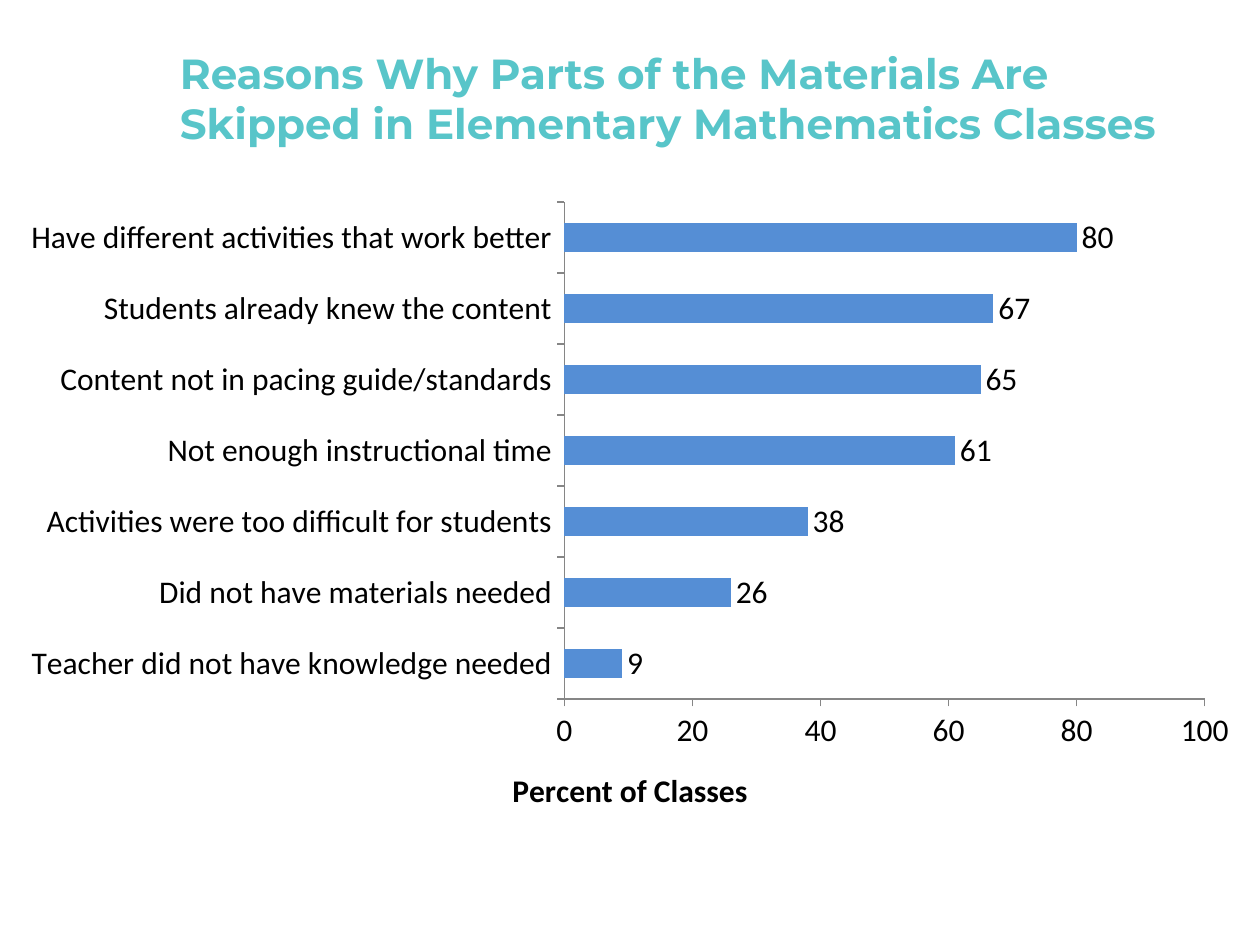
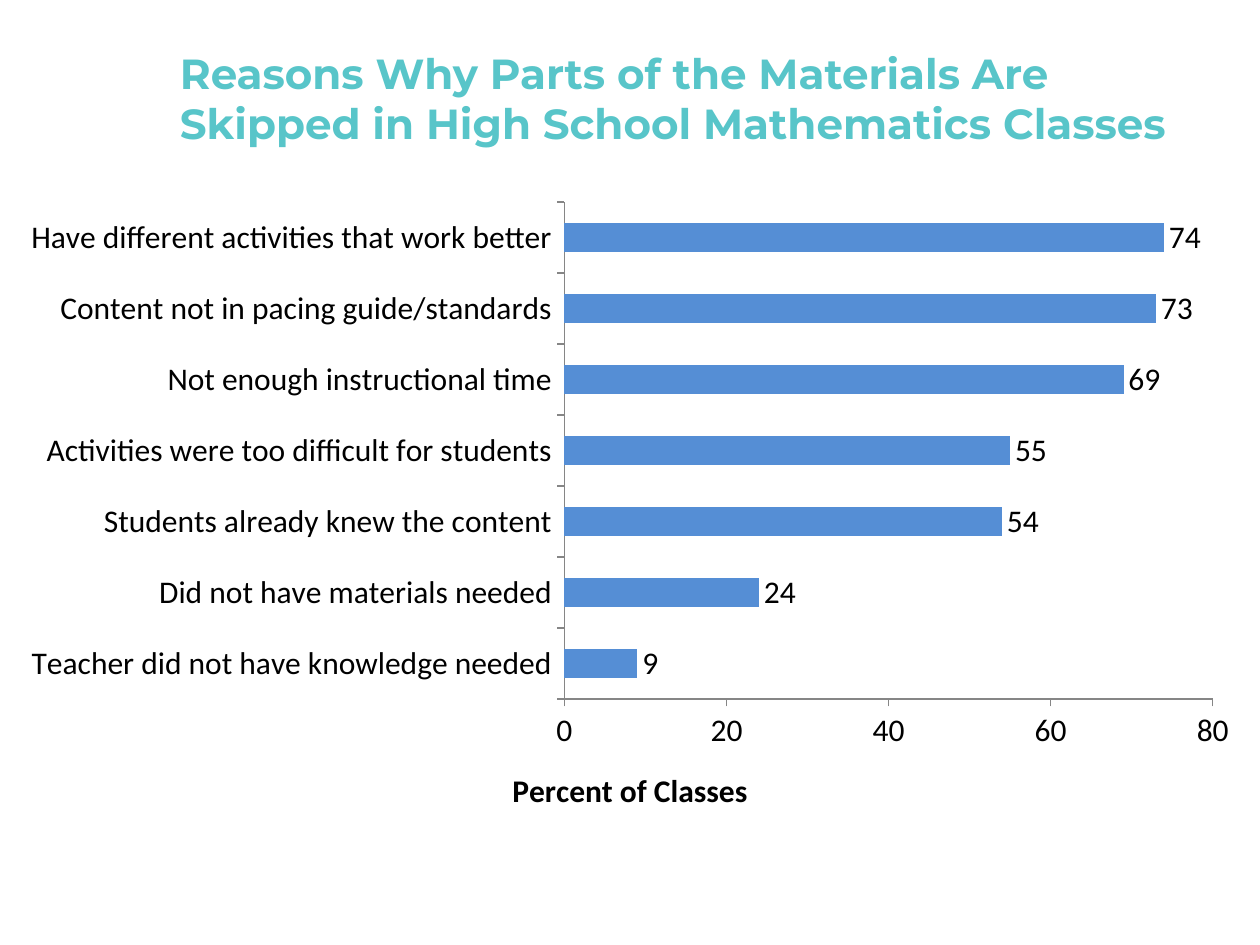
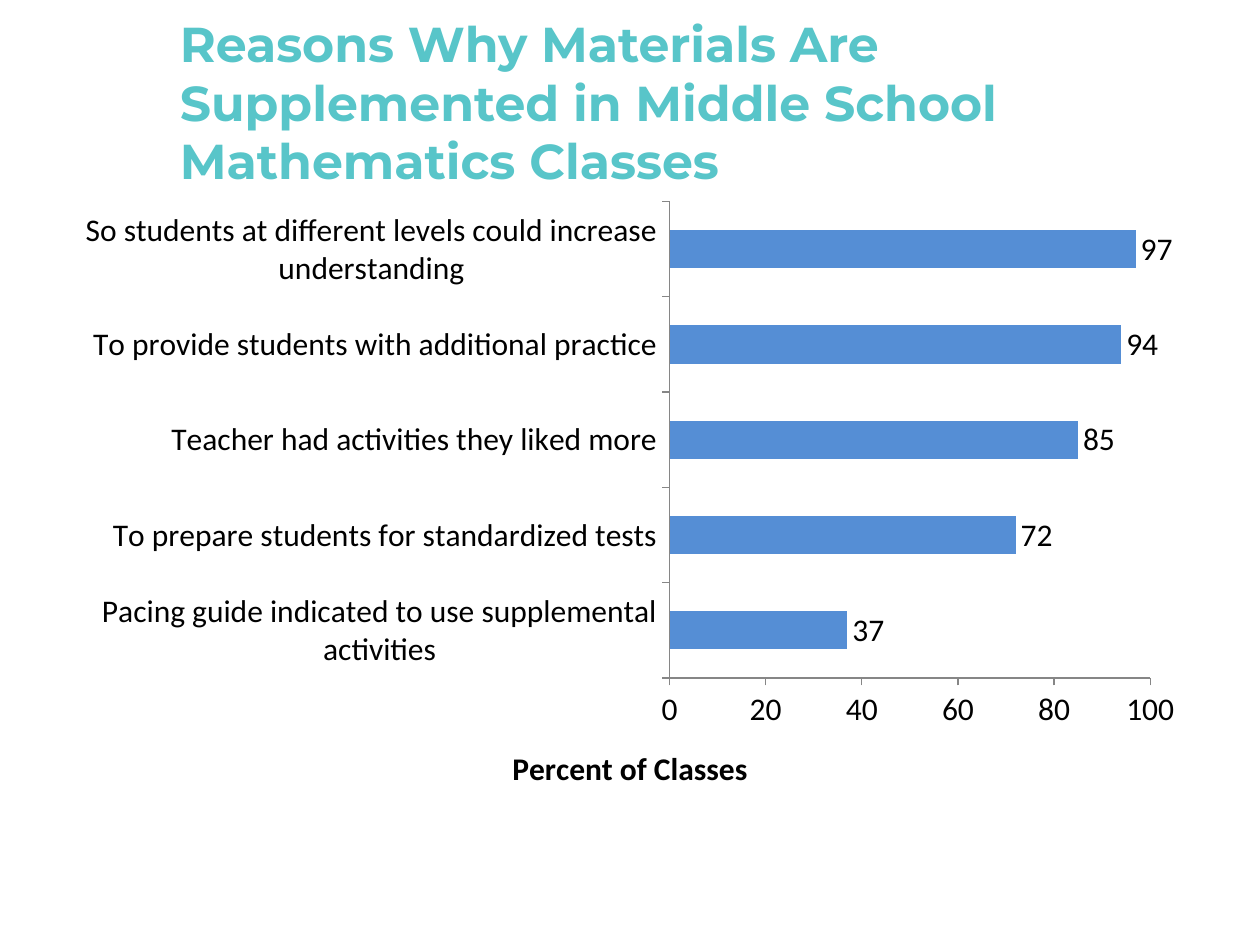
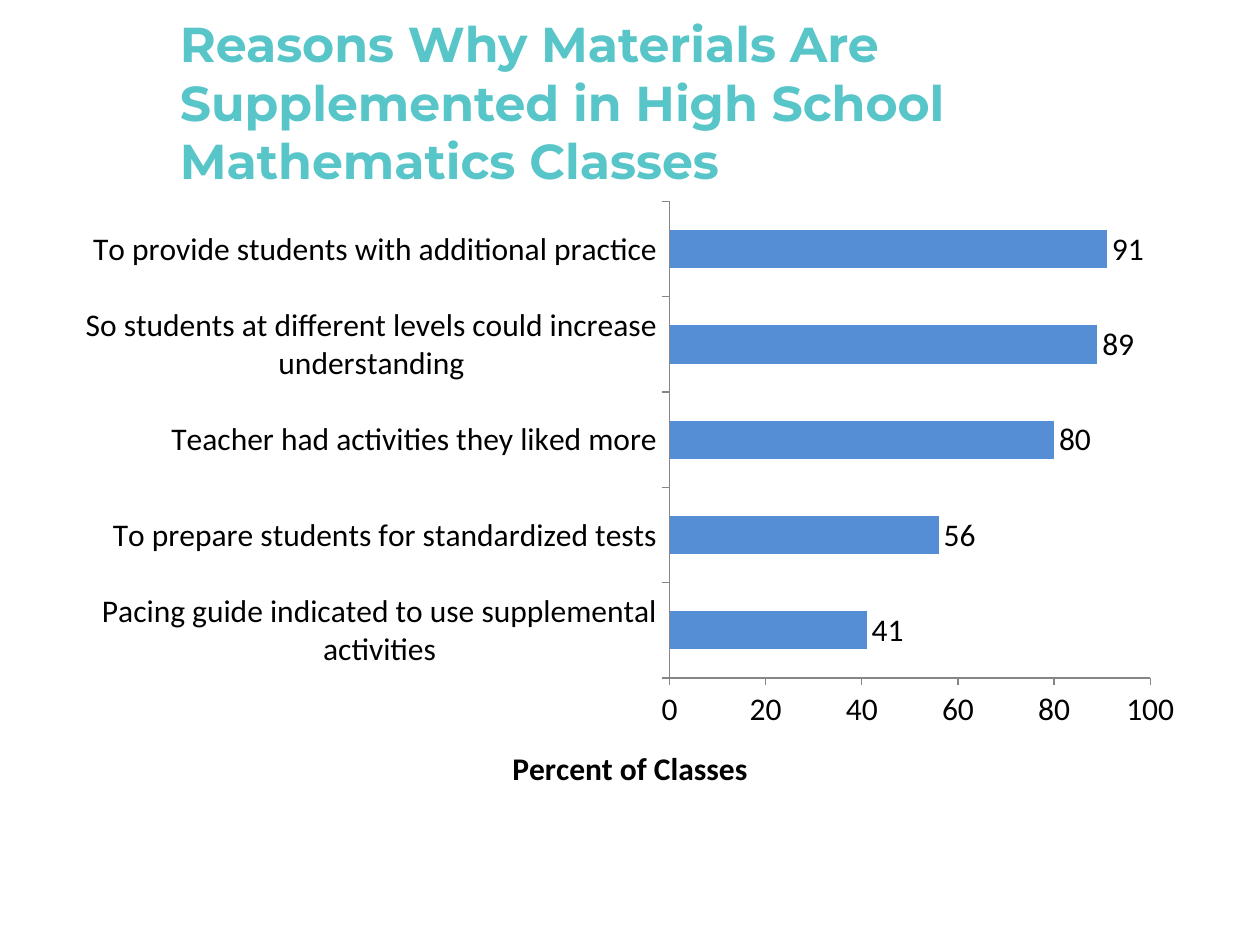
from pptx import Presentation
from pptx.chart.data import CategoryChartData
from pptx.dml.color import RGBColor
from pptx.enum.chart import XL_CHART_TYPE, XL_LABEL_POSITION, XL_TICK_MARK
from pptx.enum.text import MSO_ANCHOR
from pptx.util import Emu, Pt

SCALE = 9144  # EMU per px, 100 px to the inch
COLORS = {"title": "58C5C9", "bar": "558ED5", "text": "000000", "axis": "868686"}
HEAD = {"name": "Montserrat", "bold": True}
BODY = {"name": "Calibri", "size": Pt(18), "bold": False}
BOLD = {**BODY, "bold": True}

BETTER = "Have different activities that work better"
KNEW = "Students already knew the content"
PACING = "Content not in pacing guide/standards"
TIME = "Not enough instructional time"
HARD = "Activities were too difficult for students"
NEEDS = "Did not have materials needed"
SKILL = "Teacher did not have knowledge needed"

LEVELS = "So students at different levels could increase understanding"
DRILL = "To provide students with additional practice"
LIKED = "Teacher had activities they liked more"
TESTS = "To prepare students for standardized tests"
GUIDE = "Pacing guide indicated to use supplemental activities"

SKIP = {"title": (133, 30, 817, 95), "size": 24,
        "chart": (5, 150, 990, 517), "top": None}
ADD = {"title": (133, 33, 817, 95), "size": 28,
       "chart": (50, 150, 900, 500), "top": 100}

# Rows run from the bottom bar to the top bar.
SLIDES = [
    (SKIP, "Reasons Why Parts of the Materials Are Skipped in Elementary Mathematics Classes",
     {SKILL: 9, NEEDS: 26, HARD: 38, TIME: 61, PACING: 65, KNEW: 67, BETTER: 80}),
    (SKIP, "Reasons Why Parts of the Materials Are Skipped in High School Mathematics Classes",
     {SKILL: 9, NEEDS: 24, KNEW: 54, HARD: 55, TIME: 69, PACING: 73, BETTER: 74}),
    (ADD, "Reasons Why Materials Are Supplemented in Middle School Mathematics Classes",
     {GUIDE: 37, TESTS: 72, LIKED: 85, DRILL: 94, LEVELS: 97}),
    (ADD, "Reasons Why Materials Are Supplemented in High School Mathematics Classes",
     {GUIDE: 41, TESTS: 56, LIKED: 80, LEVELS: 89, DRILL: 91}),
]


def px(*sizes):
    return [Emu(size * SCALE) for size in sizes]


def tint(name):
    return RGBColor.from_string(COLORS[name])


def style(font, form, color="text"):
    for key, value in form.items():
        setattr(font, key, value)
    font.color.rgb = tint(color)


def add_title(slide, box, text, size):
    frame = slide.shapes.add_textbox(*px(*box)).text_frame
    frame.word_wrap = True
    frame.vertical_anchor = MSO_ANCHOR.MIDDLE
    run = frame.paragraphs[0].add_run()
    run.text = text
    style(run.font, {**HEAD, "size": Pt(size)}, "title")


def set_axis(axis):
    axis.has_major_gridlines = False
    axis.major_tick_mark = XL_TICK_MARK.OUTSIDE
    axis.minor_tick_mark = XL_TICK_MARK.NONE
    axis.format.line.color.rgb = tint("axis")
    axis.format.line.width = Pt(0.75)
    style(axis.tick_labels.font, BODY)


def add_bars(slide, box, rows, top):
    data = CategoryChartData()
    data.categories = list(rows)
    data.add_series("Series 1", list(rows.values()))
    chart = slide.shapes.add_chart(XL_CHART_TYPE.BAR_CLUSTERED, *px(*box), data).chart
    chart.has_legend = chart.has_title = False
    style(chart.font, BODY)

    scale = chart.value_axis
    for axis in (chart.category_axis, scale):
        set_axis(axis)
    scale.minimum_scale, scale.major_unit = 0, 20
    if top:
        scale.maximum_scale = top
    label = scale.axis_title.text_frame.paragraphs[0].add_run()
    label.text = "Percent of Classes"
    style(label.font, BOLD)

    plot = chart.plots[0]
    plot.gap_width, plot.vary_by_categories = 150, False
    bars = plot.series[0]
    bars.invert_if_negative = False
    bars.format.fill.solid()
    bars.format.fill.fore_color.rgb = tint("bar")
    marks = bars.data_labels
    marks.show_value = True
    marks.position = XL_LABEL_POSITION.OUTSIDE_END
    style(marks.font, BODY)


def main():
    deck = Presentation()
    deck.slide_width, deck.slide_height = px(1000, 750)
    for form, title, rows in SLIDES:
        slide = deck.slides.add_slide(deck.slide_layouts[6])
        add_bars(slide, form["chart"], rows, form["top"])
        add_title(slide, form["title"], title, form["size"])
    deck.save("out.pptx")


if __name__ == "__main__":
    main()
